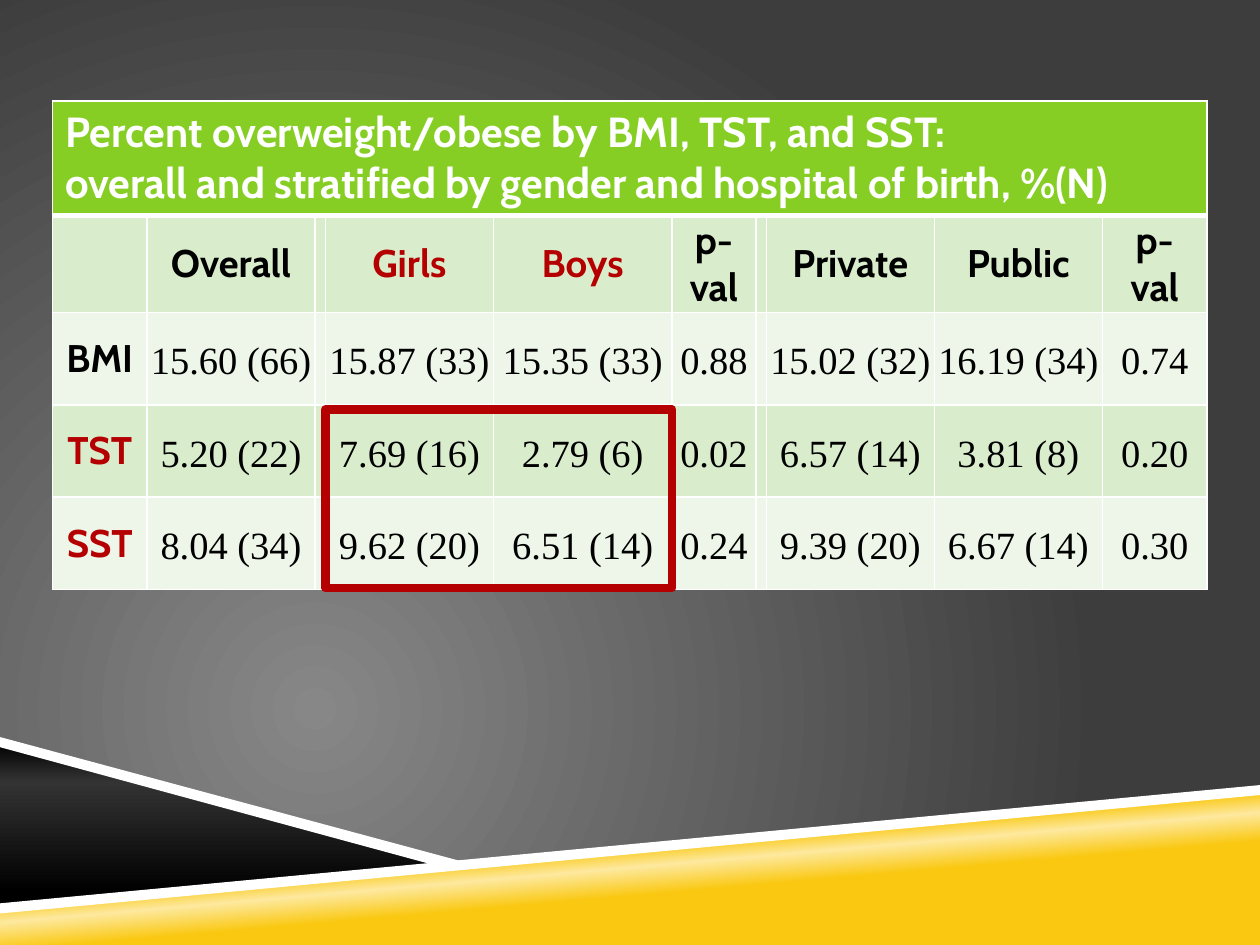
from dataclasses import dataclass

from lxml import etree
from pptx import Presentation
from pptx.dml.color import RGBColor
from pptx.enum.shapes import MSO_SHAPE
from pptx.enum.text import MSO_ANCHOR, PP_ALIGN
from pptx.oxml import parse_xml
from pptx.oxml.ns import nsdecls, qn
from pptx.util import Pt

RECTANGLE = MSO_SHAPE.RECTANGLE
MIDDLE = MSO_ANCHOR.MIDDLE
CENTER = PP_ALIGN.CENTER


@dataclass(frozen=True)
class Theme:
    white: str = "FFFFFF"
    black: str = "000000"
    red: str = "B40000"
    green: str = "86CE24"
    bands: tuple = ("D9EDCD", "EDF6E8")
    backdrop: tuple = ((0, "878787"), (100, "3D3D3D"))
    yellow: tuple = ((39, "FAC810"), (50, "FDE99F"), (58, "FAC810"))
    dark: tuple = ((0, "000000"), (24, "333333"), (90, "000000"))
    label_font: str = "Cabin"
    value_font: str = "Times New Roman"
    title_size: int = 24
    body_size: int = 22


theme = Theme()


def set_gradient(fill, owner, stops, direction):
    """Give the owner's fill any number of stops and a direction element."""
    fill.gradient()
    gradient = owner.find(".//" + qn("a:gradFill"))
    stop_xml = "".join(
        f'<a:gs pos="{position * 1000}"><a:srgbClr val="{color}"/></a:gs>'
        for position, color in stops
    )
    gradient.getparent().replace(gradient, parse_xml(
        f'<a:gradFill {nsdecls("a")} rotWithShape="1">'
        f"<a:gsLst>{stop_xml}</a:gsLst>{direction}</a:gradFill>"
    ))


def style_cell(cell, fill_color, text, font_name, size, color, bold):
    """Border, fill and text of one table cell."""
    properties = cell._tc.get_or_add_tcPr()
    for side in "LRTB":
        heading_edge = (side == "B" and fill_color == theme.green)
        properties.append(parse_xml(
            f'<a:ln{side} {nsdecls("a")} w="{Pt(3 if heading_edge else 1)}">'
            f'<a:solidFill><a:srgbClr val="{theme.white}"/></a:solidFill></a:ln{side}>'
        ))
    cell.fill.solid()
    cell.fill.fore_color.rgb = RGBColor.from_string(fill_color)
    cell.text_frame.text = text
    for paragraph in cell.text_frame.paragraphs:
        for run in paragraph.runs:
            run.font.name = font_name
            run.font.size = Pt(size)
            run.font.bold = bold
            run.font.color.rgb = RGBColor.from_string(color)


presentation = Presentation()
presentation.slide_width = Pt(720)
presentation.slide_height = Pt(540)
slide = presentation.slides.add_slide(presentation.slide_layouts[6])

# Background: circular glow at the lower left
set_gradient(
    slide.background.fill, slide._element, theme.backdrop,
    '<a:path path="circle"><a:fillToRect l="50000" t="100000" r="100000" b="50000"/></a:path>',
)

# Wedges along the bottom edge: corners, fill, gradient angle
wedges = [
    ([(0, 519.1), (720, 451.4), (720, 540), (0, 540)], theme.yellow, 265),
    ([(0, 424.1), (258.5, 493.2), (0, 519.1)], theme.dark, 90),
    ([(720, 448.6), (0, 516.2), (0, 522), (720, 454.3)], theme.white, None),
    ([(0, 421.2), (0, 427), (252, 495.4), (270, 493.9)], theme.white, None),
]
for corners, paint, angle in wedges:
    points = [(Pt(x), Pt(y)) for x, y in corners]
    builder = slide.shapes.build_freeform(*points[0])
    builder.add_line_segments(points[1:], close=True)
    wedge = builder.convert_to_shape()
    wedge.shadow.inherit = False
    wedge.line.fill.background()
    if angle is None:
        wedge.fill.solid()
        wedge.fill.fore_color.rgb = RGBColor.from_string(paint)
    else:
        set_gradient(wedge.fill, wedge._element, paint,
                     f'<a:lin ang="{angle * 60000}" scaled="0"/>')

# Table contents; empty strings are the narrow spacer columns
title = ("Percent overweight/obese by BMI, TST, and SST:\n"
         "overall and stratified by gender and hospital of birth, %(N)")
rows = [
    ["", "Overall", "", "Girls", "Boys", "p-\nval", "", "Private", "Public", "p-\nval"],
    ["BMI", "15.60 (66)", "", "15.87 (33)", "15.35 (33)", "0.88", "",
     "15.02 (32)", "16.19 (34)", "0.74"],
    ["TST", "5.20 (22)", "", "7.69 (16)", "2.79 (6)", "0.02", "",
     "6.57 (14)", "3.81 (8)", "0.20"],
    ["SST", "8.04 (34)", "", "9.62 (20)", "6.51 (14)", "0.24", "",
     "9.39 (20)", "6.67 (14)", "0.30"],
]
red_labels = {"Girls", "Boys", "TST", "SST"}
column_widths = [54, 96, 6, 96, 102, 48, 6, 96, 96, 60]
row_heights = [60.5, 55.4, 52.8, 52.8, 52.8]

table = slide.shapes.add_table(
    len(row_heights), len(column_widths), Pt(30), Pt(57.6),
    Pt(sum(column_widths)), Pt(sum(row_heights)),
).table
table.first_row = False
table.horz_banding = False
for column, width in zip(table.columns, column_widths):
    column.width = Pt(width)
for row, height in zip(table.rows, row_heights):
    row.height = Pt(height)

# Title row
table.cell(0, 0).merge(table.cell(0, len(column_widths) - 1))
for column_index in range(len(column_widths)):
    style_cell(table.cell(0, column_index), theme.green, "" if column_index else title,
               theme.label_font, theme.title_size, theme.white, True)

# Column headings, row labels and values
for row_index, texts in enumerate(rows):
    for column_index, text in enumerate(texts):
        cell = table.cell(row_index + 1, column_index)
        is_label = row_index == 0 or column_index == 0
        cell.margin_left = cell.margin_right = cell.margin_top = cell.margin_bottom = 0
        cell.vertical_anchor = MIDDLE
        style_cell(cell, theme.bands[row_index % 2], text,
                   theme.label_font if is_label else theme.value_font, theme.body_size,
                   theme.red if text in red_labels else theme.black, is_label)
        for paragraph in cell.text_frame.paragraphs:
            paragraph.alignment = CENTER
            if text and not is_label:
                paragraph.line_spacing = 1.15

# Frame around the girls and boys results for TST and SST
frame = slide.shapes.add_shape(RECTANGLE, Pt(186), Pt(234), Pt(198), Pt(102))
frame.shadow.inherit = False
frame.fill.background()
frame.line.color.rgb = RGBColor.from_string(theme.red)
frame.line.width = Pt(5)
etree.SubElement(frame._element.spPr.find(qn("a:ln")), qn("a:round"))

presentation.save("out.pptx")
